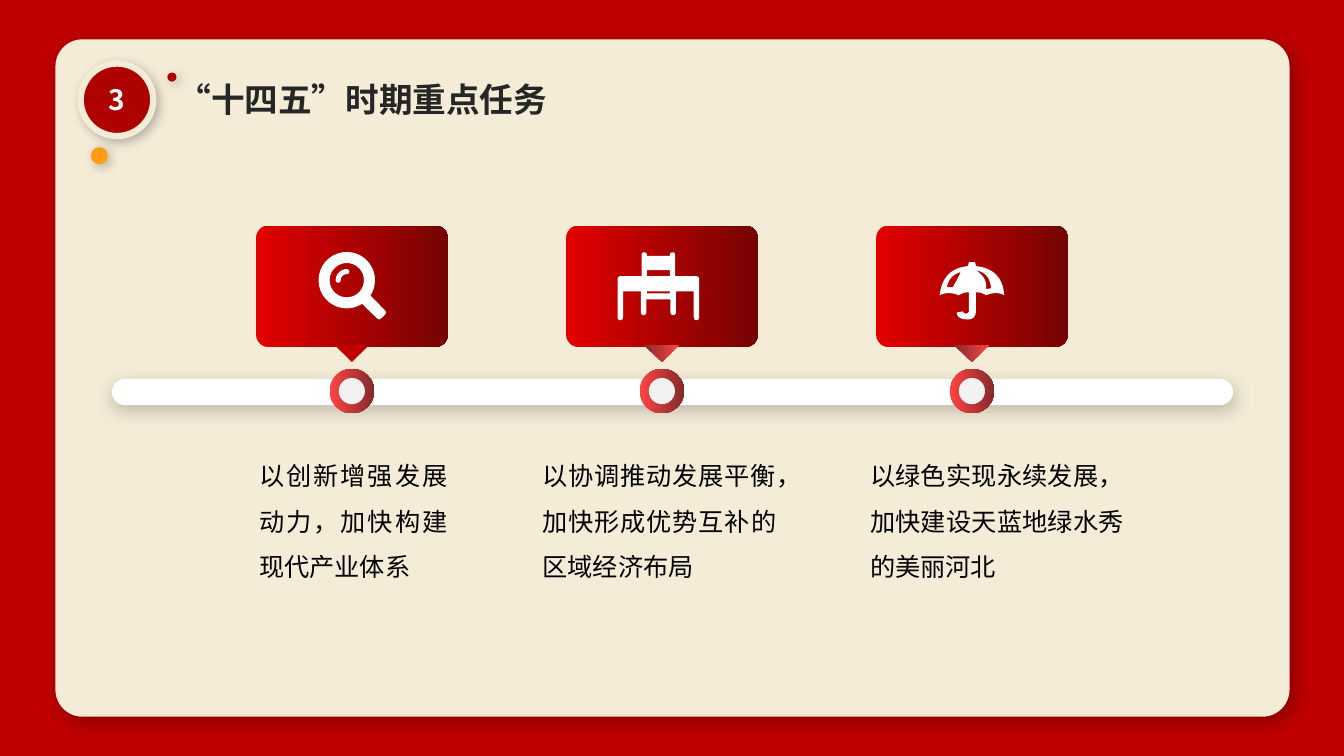
from dataclasses import dataclass
from math import cos, radians, sin

from lxml import etree
from pptx import Presentation
from pptx.dml.color import RGBColor
from pptx.enum.shapes import MSO_SHAPE
from pptx.enum.text import MSO_ANCHOR, MSO_AUTO_SIZE, PP_ALIGN
from pptx.oxml.ns import qn
from pptx.util import Emu, Inches, Pt

RECTANGLE, OVAL, TRIANGLE = MSO_SHAPE.ROUNDED_RECTANGLE, MSO_SHAPE.OVAL, MSO_SHAPE.ISOSCELES_TRIANGLE
LEFT, CENTER, JUSTIFY = PP_ALIGN.LEFT, PP_ALIGN.CENTER, PP_ALIGN.JUSTIFY
MIDDLE, TOP, GROW = MSO_ANCHOR.MIDDLE, MSO_ANCHOR.TOP, MSO_AUTO_SIZE.SHAPE_TO_FIT_TEXT

FONT = "Noto Sans CJK SC"
RED = RGBColor(0xC0, 0x00, 0x00)
DEEP_RED = RGBColor(0xAE, 0x02, 0x01)
CREAM = RGBColor(0xF4, 0xEC, 0xD7)
ORANGE = RGBColor(0xFF, 0x9C, 0x11)
CHARCOAL = RGBColor(0x26, 0x26, 0x26)
BLACK = RGBColor(0x00, 0x00, 0x00)
WHITE = RGBColor(0xFF, 0xFF, 0xFF)
PALE_GREY = RGBColor(0xF2, 0xF2, 0xF2)
CARD_BLEND = (RGBColor(0xE3, 0x00, 0x00), RGBColor(0x76, 0x03, 0x03))
MARKER_BLEND = (RGBColor(0xFE, 0x44, 0x44), RGBColor(0x83, 0x2B, 0x2B))

# Grid: one column or row is a tenth of an inch
CELL = Inches(0.1)
FIRST_CENTER, STEP_PITCH = 34.9, 30.75
CARD_TOP, MARKER_MIDDLE, CAPTION_TOP = 22.4, 38.8, 44.2

Fill = RGBColor | tuple[RGBColor, RGBColor]
Contour = list[tuple[float, float]]


@dataclass
class Box:
    column: float
    row: float
    columns: float
    rows: float

    def emu(self) -> list[Emu]:
        return [Emu(round(n * CELL)) for n in (self.column, self.row, self.columns, self.rows)]


@dataclass
class Shadow:
    alpha: int
    blur: float
    distance: float
    angle: int = 45


@dataclass
class Step:
    caption: str
    caption_column: float
    caption_columns: float
    icon: list[Contour]
    pointer: Fill


DOT_SHADOW = Shadow(25, 8, 3)


def arc(x: float, y: float, radius: float, start: int, end: int) -> Contour:
    count = max(6, abs(end - start) // 10)
    angles = [radians(start + (end - start) * i / count) for i in range(count + 1)]
    return [(x + radius * cos(a), y + radius * sin(a)) for a in angles]


def curve(*controls: tuple[float, float]) -> Contour:
    """Sample a cubic curve given by four points."""
    points = []
    for t in (i / 10 for i in range(11)):
        weights = ((1 - t) ** 3, 3 * t * (1 - t) ** 2, 3 * t * t * (1 - t), t ** 3)
        points.append(tuple(sum(w * c[axis] for w, c in zip(weights, controls)) for axis in (0, 1)))
    return points


def mirrored(half: Contour) -> Contour:
    return half + [(-x, y) for x, y in reversed(half)]


def shifted(contour: Contour, dx: float, dy: float) -> Contour:
    return [(x + dx, y + dy) for x, y in contour]


# Icons, measured from the middle of the card's top edge
def magnifier() -> list[Contour]:
    handle = [(3.8, 3), (3.9, 3.2), (3.8, 3.4), (3.4, 3.8), (3.2, 3.9), (3, 3.8)]
    glint = (arc(0, 0, 1.1, 180, 270) + arc(0, -0.85, 0.25, -90, 90)
             + arc(0, 0, 0.6, 270, 180) + arc(-0.85, 0, 0.25, 0, 180))
    contours = [arc(0, 0, 2.8, 57, 393) + handle, arc(0, 0, 1.7, 0, 360), glint]
    return [shifted(contour, -0.5, 5.4) for contour in contours]


def table_and_chair() -> list[Contour]:
    half = [(0, 0.4), (1.15, 0.4), *arc(1.4, 0.3, 0.27, 180, 360), (1.65, 2.4),
            *arc(3.75, 2.7, 0.3, -90, 0), *arc(3.78, 6.5, 0.27, 0, 180), (3.5, 3.9),
            (1.75, 3.9), *arc(1.47, 6, 0.27, 0, 180), (1.2, 4.7), (0, 4.7)]
    gaps = [mirrored([(1.15, top), (1.15, bottom)]) for top, bottom in ((1.8, 2.4), (3.9, 4.1))]
    return [shifted(contour, -0.35, 2.6) for contour in [mirrored(half), *gaps]]


def umbrella() -> list[Contour]:
    outline = (curve((-0.9, 8.5), (-0.8, 8.8), (-0.3, 8.8), (-0.3, 8.4))
               + curve((-0.3, 6.6), (-0.7, 6.6), (-1, 6.7), (-1.3, 6.9))
               + curve((-1.3, 6.9), (-2, 6.6), (-2.6, 6.6), (-3.2, 6.9))
               + curve((-3.2, 6.9), (-3, 5.2), (-2.2, 4.2), (-0.4, 4))
               + [(-0.3, 3.6), (0.3, 3.6)]
               + curve((0.4, 4), (2.2, 4.2), (3.1, 5.2), (3.2, 6.9))
               + curve((3.2, 6.9), (2.7, 6.6), (2.1, 6.6), (1.4, 6.9))
               + curve((1.4, 6.9), (1.1, 6.7), (0.8, 6.6), (0.4, 6.6))
               + curve((0.4, 8.4), (0.4, 9.1), (0, 9.3), (-0.4, 9.3))
               + curve((-0.4, 9.3), (-1, 9.3), (-1.5, 9.1), (-1.5, 8.6)))
    right_gap = (curve((1.9, 6.2), (1.8, 5), (1.2, 4.6), (0.4, 4.4))
                 + curve((0.4, 4.4), (1.1, 4.9), (1.5, 5.4), (1.4, 6.3)))
    left_gap = (curve((-1.9, 6.1), (-1.6, 5.6), (-1.3, 5), (-1.1, 4.6))
                + curve((-1.1, 4.6), (-1.9, 4.8), (-2.3, 5.3), (-2.5, 6.1)))
    return [outline, right_gap, left_gap]


STEPS = [
    Step("以创新增强发展动力，加快构建现代产业体系", 25.7, 18.7, magnifier(), RED),
    Step("以协调推动发展平衡，加快形成优势互补的区域经济布局", 53.8, 23.2, table_and_chair(), MARKER_BLEND),
    Step("以绿色实现永续发展，加快建设天蓝地绿水秀的美丽河北", 86.3, 25.2, umbrella(), MARKER_BLEND),
]


def paint(shape, fill: Fill, shadow: Shadow | None = None) -> None:
    if isinstance(fill, RGBColor):
        shape.fill.solid()
        shape.fill.fore_color.rgb = fill
    else:
        shape.fill.gradient()
        shape.fill.gradient_angle = 0
        for stop, color in zip(shape.fill.gradient_stops, fill):
            stop.color.rgb = color
    shape.line.fill.background()
    shape.shadow.inherit = False
    if shadow:
        effects = shape.element.spPr.find(qn("a:effectLst"))
        outer = etree.SubElement(effects, qn("a:outerShdw"), blurRad=str(Pt(shadow.blur)),
                                 dist=str(Pt(shadow.distance)), dir=str(shadow.angle * 60000),
                                 algn="ctr", rotWithShape="0")
        color = etree.SubElement(outer, qn("a:srgbClr"), val=str(BLACK))
        etree.SubElement(color, qn("a:alpha"), val=str(shadow.alpha * 1000))


def add_figure(shapes, kind, box: Box, fill: Fill, shadow: Shadow | None = None, corner: float | None = None):
    shape = shapes.add_shape(kind, *box.emu())
    if corner is not None:
        shape.adjustments[0] = corner
    paint(shape, fill, shadow)
    return shape


def write(shape, text: str, size: int, color: RGBColor, alignment, bold: bool = False):
    paragraph = shape.text_frame.paragraphs[0]
    paragraph.alignment = alignment
    run = paragraph.add_run()
    run.text = text
    run.font.size, run.font.bold, run.font.name = Pt(size), bold, FONT
    run.font.color.rgb = color
    etree.SubElement(run.font._element, qn("a:ea"), typeface=FONT)
    return paragraph


def add_icon(shapes, contours: list[Contour], center: float) -> None:
    placed = [[(round((center + x) * CELL), round((CARD_TOP + y) * CELL)) for x, y in contour]
              for contour in contours]
    builder = shapes.build_freeform(*placed[0][0])
    for number, contour in enumerate(placed):
        if number:
            builder.move_to(*contour[0])
        builder.add_line_segments(contour[1:], close=True)
    paint(builder.convert_to_shape(), WHITE)


def add_step(slide, step: Step, center: float) -> None:
    shapes = slide.shapes.add_group_shape().shapes
    for diameter, fill in ((4.4, MARKER_BLEND), (2.6, PALE_GREY)):
        corner = center - diameter / 2, MARKER_MIDDLE - diameter / 2
        add_figure(shapes, OVAL, Box(*corner, diameter, diameter), fill)
    add_figure(shapes, RECTANGLE, Box(center - 9.5, CARD_TOP, 19, 12), CARD_BLEND, corner=0.1)
    pointer = add_figure(shapes, TRIANGLE, Box(center - 1.75, CARD_TOP + 11.8, 3.5, 1.7), step.pointer)
    pointer.rotation = 180
    add_icon(shapes, step.icon, center)
    caption = shapes.add_textbox(*Box(step.caption_column, CAPTION_TOP, step.caption_columns, 13.6).emu())
    frame = caption.text_frame
    frame.word_wrap, frame.auto_size = True, GROW
    frame.margin_left = frame.margin_right = frame.margin_top = frame.margin_bottom = 0
    paragraph = write(caption, step.caption, 18, BLACK, JUSTIFY)
    paragraph.line_spacing, paragraph.space_after = 1.5, Pt(12)


def add_heading(slide) -> None:
    title = slide.shapes.title
    title.left, title.top, title.width, title.height = Box(16.6, 7.3, 43.2, 5).emu()
    title.text_frame.vertical_anchor = TOP
    write(title, "“十四五”时期重点任务", 24, CHARCOAL, LEFT, bold=True)
    title.element.getparent().append(title.element)  # bring above the panel
    badge = add_figure(slide.shapes, OVAL, Box(8, 6.3, 7.2, 7.2), DEEP_RED, DOT_SHADOW)
    badge.line.color.rgb, badge.line.width = CREAM, Pt(4.5)
    badge.text_frame.word_wrap, badge.text_frame.vertical_anchor = False, MIDDLE
    write(badge, "3", 20, WHITE, CENTER, bold=True)


def main() -> None:
    presentation = Presentation()
    presentation.slide_width, presentation.slide_height = Inches(13.33), Inches(7.5)
    slide = presentation.slides.add_slide(presentation.slide_layouts[5])

    # Backdrop, panel and dots
    slide.background.fill.solid()
    slide.background.fill.fore_color.rgb = RED
    add_figure(slide.shapes, RECTANGLE, Box(5.5, 3.9, 122.4, 67.2), CREAM, Shadow(30, 15, 5), 0.04)
    add_figure(slide.shapes, OVAL, Box(9, 14.6, 1.7, 1.7), ORANGE, DOT_SHADOW)
    add_figure(slide.shapes, OVAL, Box(16.6, 7.2, 0.9, 0.9), DEEP_RED, DOT_SHADOW)
    add_heading(slide)

    # Timeline bar and steps
    add_figure(slide.shapes, RECTANGLE, Box(11.1, 37.6, 111.2, 2.6), WHITE, Shadow(21, 12, 3, 90), 0.5)
    for number, step in enumerate(STEPS):
        add_step(slide, step, FIRST_CENTER + number * STEP_PITCH)
    presentation.save("out.pptx")


if __name__ == "__main__":
    main()
